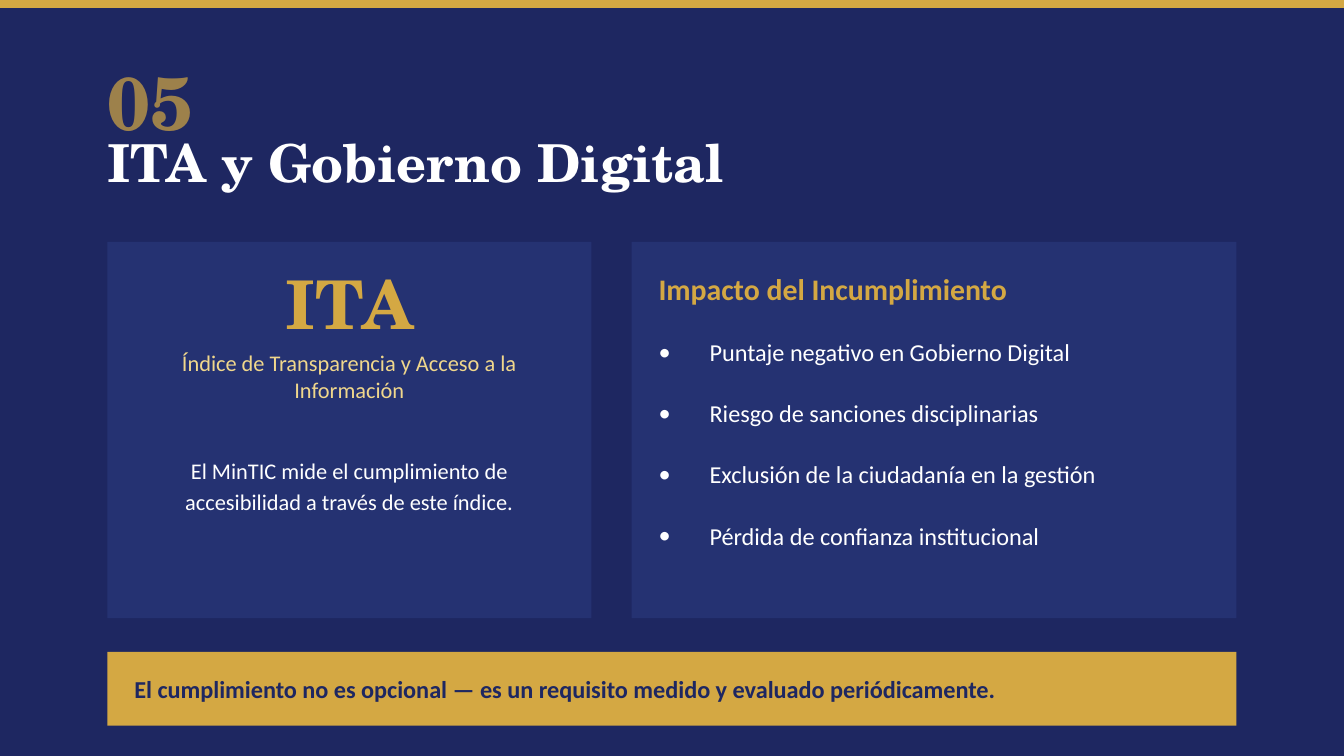
from dataclasses import dataclass

from lxml import etree
from pptx import Presentation, util as u
from pptx.dml.color import RGBColor
from pptx.enum import shapes, text
from pptx.oxml import ns

NUM, TITLE = "05", "ITA y Gobierno Digital"
INDEX = {
    "name": "ITA",
    "long": "Índice de Transparencia y Acceso a la Información",
    "note": "El MinTIC mide el cumplimiento de accesibilidad a través de este índice.",
}
IMPACT = "Impacto del Incumplimiento"
RISKS = [
    "Puntaje negativo en Gobierno Digital",
    "Riesgo de sanciones disciplinarias",
    "Exclusión de la ciudadanía en la gestión",
    "Pérdida de confianza institucional",
]
CLOSE = "El cumplimiento no es opcional — es un requisito medido y evaluado periódicamente."


@dataclass(frozen=True)
class Theme:
    navy: str = "1E2761"
    panel: str = "253272"
    gold: str = "D4A843"
    pale: str = "F0D78C"
    white: str = "FFFFFF"
    serif: str = "TeX Gyre Schola"
    sans: str = "Calibri"
    num: int = 40
    name: int = 36
    title: int = 28
    head: int = 16
    item: int = 13
    body: int = 12


T = Theme()
WIDE = 10
HIGH = WIDE * 9 / 16
EDGE, PAD, GAP = 0.8, 0.2, 0.3      # slide margin, panel padding, gutter
FULL = WIDE - 2 * EDGE
LEFT = 3.6                          # width of the index panel
COL = EDGE + LEFT + GAP             # start of the impact panel
RIGHT = FULL - LEFT - GAP
TOP, TALL = 1.8, 2.8                # panel row
FOOT, BAR = 4.85, 0.55              # closing band
MID = text.MSO_ANCHOR.MIDDLE
CENTER = text.PP_ALIGN.CENTER


def place(shape, x, y, w, h):
    shape.left, shape.top, shape.width, shape.height = map(u.Inches, (x, y, w, h))


def block(slide, color, x, y, w, h):
    rect = slide.shapes.add_shape(
        shapes.MSO_SHAPE.RECTANGLE, *map(u.Inches, (x, y, w, h)))
    rect.shadow.inherit = False
    rect.fill.solid()
    rect.fill.fore_color.rgb = RGBColor.from_string(color)
    rect.line.fill.background()


def frame(shape, anchor=MID):
    """Strip the insets of a text shape and return its text frame."""
    tf = shape.text_frame
    tf.margin_left = tf.margin_right = tf.margin_top = tf.margin_bottom = 0
    tf.word_wrap = True
    tf.auto_size = text.MSO_AUTO_SIZE.NONE
    tf.vertical_anchor = anchor
    return tf


def box(slide, x, y, w, h, anchor=MID):
    return frame(slide.shapes.add_textbox(*map(u.Inches, (x, y, w, h))), anchor)


def write(par, words, size, color, face=T.sans, bold=False,
          align=text.PP_ALIGN.LEFT, lead=None):
    par.alignment = align
    if lead:
        par.line_spacing = lead
    run = par.add_run()
    run.text = words
    font = run.font
    font.name, font.size, font.bold = face, u.Pt(size), bold
    font.color.rgb = RGBColor.from_string(color)
    return run


def fade(run, share):
    """Make the run's colour partly transparent."""
    color = run.font.fill._xPr.find(".//" + ns.qn("a:srgbClr"))
    etree.SubElement(color, ns.qn("a:alpha"), val=str(int(share * 100000)))


def bullet(par, indent):
    pr = par._p.get_or_add_pPr()
    step = int(u.Inches(indent))
    pr.set("marL", str(step))
    pr.set("indent", str(-step))
    etree.SubElement(pr, ns.qn("a:buSzPct"), val="100000")
    etree.SubElement(pr, ns.qn("a:buFont"), typeface=T.sans)
    etree.SubElement(pr, ns.qn("a:buChar"), char="•")


def header(slide):
    block(slide, T.gold, 0, 0, WIDE, 0.06)
    num = box(slide, EDGE, 0.4, 1.5, 0.7).paragraphs[0]
    fade(write(num, NUM, T.num, T.gold, T.serif, True), 0.7)
    title = slide.shapes.title
    place(title, EDGE, 0.9, 8, 0.6)
    write(frame(title).paragraphs[0], TITLE, T.title, T.white, T.serif, True)


def index(slide):
    block(slide, T.panel, EDGE, TOP, LEFT, TALL)
    rows = [
        ("name", 0, 0.15, 0.6, T.name, T.gold, T.serif, True, None),
        ("long", PAD, 0.75, 0.5, T.body, T.pale, T.sans, False, None),
        ("note", PAD, 1.4, 0.8, T.body, T.white, T.sans, False, 1.15),
    ]
    for key, pad, down, h, size, color, face, bold, lead in rows:
        tf = box(slide, EDGE + pad, TOP + down, LEFT - 2 * pad, h)
        write(tf.paragraphs[0], INDEX[key], size, color, face, bold, CENTER, lead)


def impact(slide):
    block(slide, T.panel, COL, TOP, RIGHT, TALL)
    x, w = COL + PAD, RIGHT - 2 * PAD
    head = box(slide, x, TOP + 0.15, w, 0.4)
    write(head.paragraphs[0], IMPACT, T.head, T.gold, bold=True)
    tf = box(slide, x, TOP + 0.7, w, 2, text.MSO_ANCHOR.TOP)
    for i, risk in enumerate(RISKS):
        par = tf.add_paragraph() if i else tf.paragraphs[0]
        bullet(par, 0.38)
        if i:
            par.space_before = u.Pt(16.4)
        write(par, risk, T.item, T.white, lead=1.05)


def closing(slide):
    block(slide, T.gold, EDGE, FOOT, FULL, BAR)
    tf = box(slide, EDGE + PAD, FOOT, FULL - 2 * PAD, BAR)
    write(tf.paragraphs[0], CLOSE, T.item, T.navy, bold=True)


def main():
    deck = Presentation()
    deck.slide_width, deck.slide_height = u.Inches(WIDE), u.Inches(HIGH)
    slide = deck.slides.add_slide(deck.slide_layouts[5])
    slide.background.fill.solid()
    slide.background.fill.fore_color.rgb = RGBColor.from_string(T.navy)
    for part in (header, index, impact, closing):
        part(slide)
    deck.save("out.pptx")


if __name__ == "__main__":
    main()
